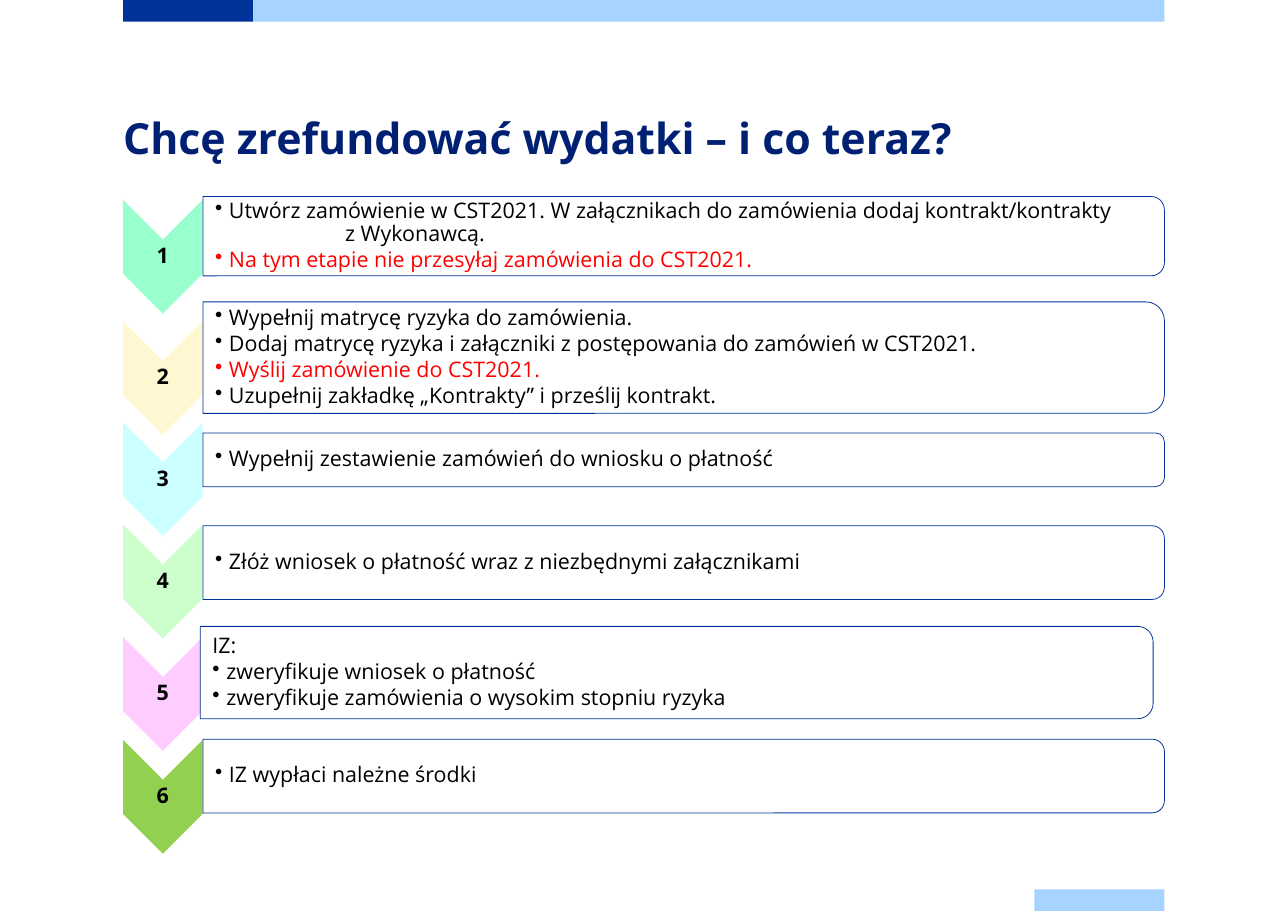
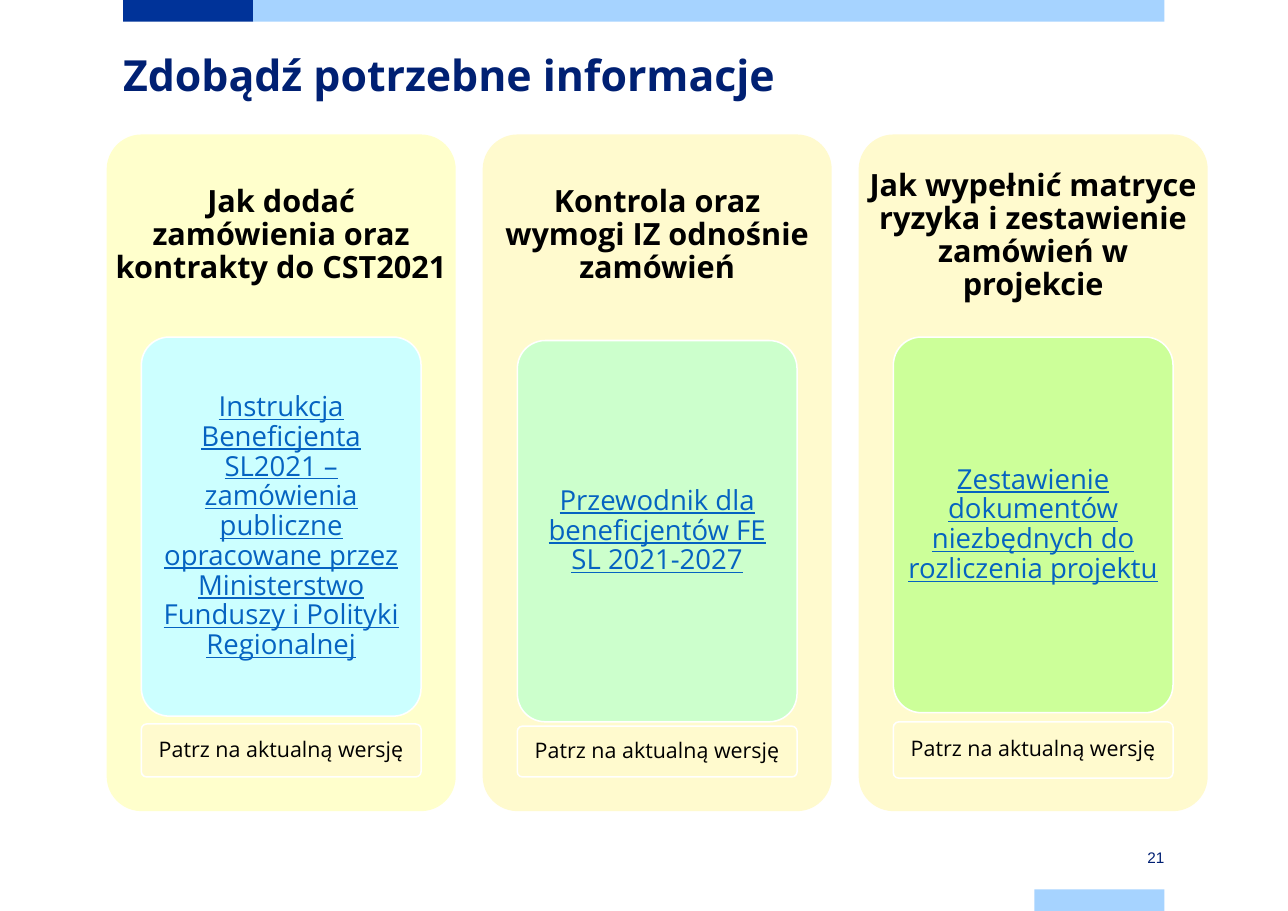
from dataclasses import dataclass

from lxml import etree
from pptx import Presentation
from pptx import util as u
from pptx.dml.color import RGBColor
from pptx.enum import shapes, text
from pptx.oxml import ns

Cm, Pt = u.Cm, u.Pt
SHAPE, ALIGN, ANCHOR = shapes.MSO_SHAPE, text.PP_ALIGN, text.MSO_ANCHOR


@dataclass(frozen=True)
class Theme:
    # Colours
    navy: str = "003399"
    sky: str = "A6D3FF"
    title: str = "002073"
    ink: str = "000000"
    alert: str = "FF0000"
    link: str = "0563C1"
    white: str = "FFFFFF"
    cream: str = "FFFACE"
    # Fonts and sizes in points
    font: str = "Open Sans"
    number_font: str = "Arial"
    title_size: int = 28
    heading_size: int = 20
    link_size: int = 18
    body_size: int = 14
    number_size: int = 10
    # Page geometry in cm
    left: float = 2.84
    right: float = 26.85
    band: float = 0.5
    tab: float = 3.0


class Deck:
    """Holds the theme, the presentation and the current slide."""

    def __init__(self, theme):
        self.t = theme
        self.prs = Presentation()
        self.prs.slide_width, self.prs.slide_height = Cm(29.7), Cm(21)
        self.s = None

    def slide(self, title, top):
        t = self.t
        self.s = self.prs.slides.add_slide(self.prs.slide_layouts[6])
        # Bands at the top and bottom edges
        for x, y, w, color in ((t.left, 0, 3, t.navy),
                               (t.left + 3, 0, t.right - t.left - 3, t.sky),
                               (t.right - 3, 21 - t.band, 3, t.sky)):
            self.shape(SHAPE.RECTANGLE, x, y, w, t.band, color)
        tf = self.textbox(t.left, top, t.right - t.left, 1.8, ANCHOR.TOP)
        self.label(tf, title, t.title_size, t.title, bold=True,
                   align=ALIGN.LEFT, spacing=Pt(36))

    def shape(self, kind, x, y, w, h, fill, line=None, width=1, turned=False):
        """Add a shape by its visible box; turned means rotated by 90 degrees."""
        if turned:
            x, y, w, h = x + (w - h) / 2, y + (h - w) / 2, h, w
        sp = self.s.shapes.add_shape(kind, Cm(x), Cm(y), Cm(w), Cm(h))
        sp.rotation = 90 if turned else 0
        sp.shadow.inherit = False
        sp.fill.solid()
        sp.fill.fore_color.rgb = RGBColor.from_string(fill)
        if line:
            sp.line.color.rgb = RGBColor.from_string(line)
            sp.line.width = Pt(width)
        else:
            sp.line.fill.background()
        return sp

    def rounded(self, x, y, w, h, fill, line=None):
        sp = self.shape(SHAPE.ROUNDED_RECTANGLE, x, y, w, h, fill, line)
        sp.adjustments[0] = 0.1
        return sp

    def frame(self, sp, anchor=ANCHOR.MIDDLE, side=0.0, edge=0.0):
        tf = sp.text_frame
        tf.word_wrap = True
        tf.vertical_anchor = anchor
        tf.margin_left = tf.margin_right = Cm(side)
        tf.margin_top = tf.margin_bottom = Cm(edge)
        return tf

    def textbox(self, x, y, w, h, anchor=ANCHOR.MIDDLE, side=0.0, edge=0.0):
        sp = self.s.shapes.add_textbox(Cm(x), Cm(y), Cm(w), Cm(h))
        return self.frame(sp, anchor, side, edge)

    def style(self, p, size, color, bold=False, underline=False, font=None):
        for r in p.runs:
            r.font.name = font or self.t.font
            r.font.size = Pt(size)
            r.font.bold = bold
            r.font.underline = underline
            r.font.color.rgb = RGBColor.from_string(color)

    def label(self, tf, words, size, color, align=ALIGN.CENTER, spacing=0.9,
              **look):
        p = tf.paragraphs[0]
        p.text = words
        p.alignment = align
        p.line_spacing = spacing
        self.style(p, size, color, **look)

    def bullets(self, tf, items):
        """Fill a frame with (text, colour, has bullet) items."""
        for i, (words, color, bullet) in enumerate(items):
            p = tf.add_paragraph() if i else tf.paragraphs[0]
            p.text = words
            p.alignment = ALIGN.LEFT
            pPr = p._p.get_or_add_pPr()
            if bullet:
                pPr.set("marL", str(Cm(0.32)))
                pPr.set("indent", str(-Cm(0.32)))
                etree.SubElement(pPr, ns.qn("a:buChar")).set("char", "•")
            if "\t" in words:
                tabs = etree.SubElement(pPr, ns.qn("a:tabLst"))
                tab = etree.SubElement(tabs, ns.qn("a:tab"))
                tab.set("pos", str(Cm(self.t.tab)))
                tab.set("algn", "l")
            p.line_spacing = 0.9
            p.space_after = Pt(2)
            self.style(p, self.t.body_size, color)

    def step(self, number, color, arrow_top, box, items):
        t = self.t
        # Numbered chevron
        arrow = (t.left, arrow_top, 1.83, 2.62)
        self.shape(SHAPE.CHEVRON, *arrow, color, turned=True)
        self.label(self.textbox(*arrow), str(number), t.body_size, t.ink,
                   bold=True)
        # Box with its right corners rounded
        self.shape(SHAPE.ROUND_2_SAME_RECTANGLE, *box, t.white, t.navy, 0.5,
                   turned=True)
        self.bullets(self.textbox(*box, side=0.28), items)

    def card(self, x, fill, heading, link, link_fill, link_box, note, note_box):
        t = self.t
        top, w, inset = 3.1, 8.05, 0.8
        self.rounded(x, top, w, 15.6, fill)
        self.label(self.textbox(x, top, w, 4.67, side=0.2, edge=0.2), heading,
                   t.heading_size, t.ink, bold=True)
        # Link panel and note below it
        for words, color, (y, h), size, ink, under in (
                (link, link_fill, link_box, t.link_size, t.link, True),
                (note, t.cream, note_box, t.body_size, t.ink, False)):
            sp = self.rounded(x + inset, y, w - 2 * inset, h, color, t.white)
            self.label(self.frame(sp, side=0.12, edge=0.1), words, size, ink,
                       underline=under)

    def page_number(self, number):
        t = self.t
        tf = self.textbox(t.right - 3, 19.5, 3, 0.52)
        self.label(tf, str(number), t.number_size, t.title, align=ALIGN.RIGHT,
                   spacing=1.0, font=t.number_font)


def refund_slide(deck):
    t = deck.t
    deck.slide("Chcę zrefundować wydatki – i co teraz?", 2.49)
    x, w = 4.68, 22.17
    steps = [
        ("99FFCC", 4.61, (x, 4.53, w, 1.83), [
            ("Utwórz zamówienie w CST2021. W załącznikach do zamówienia dodaj "
             "kontrakt/kontrakty\v\tz Wykonawcą.", t.ink, True),
            ("Na tym etapie nie przesyłaj zamówienia do CST2021.",
             t.alert, True)]),
        ("FFF7D1", 7.4, (x, 6.96, w, 2.57), [
            ("Wypełnij matrycę ryzyka do zamówienia.", t.ink, True),
            ("Dodaj matrycę ryzyka i załączniki z postępowania do zamówień "
             "w CST2021.", t.ink, True),
            ("Wyślij zamówienie do CST2021.", t.alert, True),
            ("Uzupełnij zakładkę „Kontrakty” i prześlij kontrakt.",
             t.ink, True)]),
        ("CCFFFF", 9.74, (x, 9.98, w, 1.24), [
            ("Wypełnij zestawienie zamówień do wniosku o płatność",
             t.ink, True)]),
        ("CCFFCC", 12.1, (x, 12.12, w, 1.7), [
            ("Złóż wniosek o płatność wraz z niezbędnymi załącznikami",
             t.ink, True)]),
        ("FFCCFF", 14.69, (4.62, 14.44, 21.97, 2.13), [
            ("IZ:", t.ink, False),
            ("zweryfikuje wniosek o płatność", t.ink, True),
            ("zweryfikuje zamówienia o wysokim stopniu ryzyka",
             t.ink, True)]),
        ("92D050", 17.06, (x, 17.04, w, 1.7), [
            ("IZ wypłaci należne środki", t.ink, True)]),
    ]
    for number, step in enumerate(steps, 1):
        deck.step(number, *step)


def information_slide(deck):
    t = deck.t
    deck.slide("Zdobądź potrzebne informacje", 1.04)
    note = "Patrz na aktualną wersję"
    cards = [
        ("FFFFCC", "Jak dodać zamówienia oraz kontrakty do CST2021",
         "Instrukcja Beneficjenta SL2021 – zamówienia publiczne opracowane "
         "przez Ministerstwo Funduszy i Polityki Regionalnej",
         "CCFFFF", (7.77, 8.74), note, (16.69, 1.22)),
        (t.cream, "Kontrola oraz wymogi IZ odnośnie zamówień",
         "Przewodnik dla beneficjentów FE SL 2021-2027",
         "CCFFCC", (7.85, 8.79), note, (16.74, 1.17)),
        (t.cream, "Jak wypełnić matryce ryzyka i zestawienie zamówień "
         "w projekcie",
         "Zestawienie dokumentów niezbędnych do rozliczenia projektu",
         "CCFF99", (7.77, 8.66), note, (16.64, 1.3)),
    ]
    for i, card in enumerate(cards):
        deck.card(2.46 + 8.67 * i, *card)
    deck.page_number(21)


def main():
    deck = Deck(Theme())
    refund_slide(deck)
    information_slide(deck)
    deck.prs.save("out.pptx")


if __name__ == "__main__":
    main()
